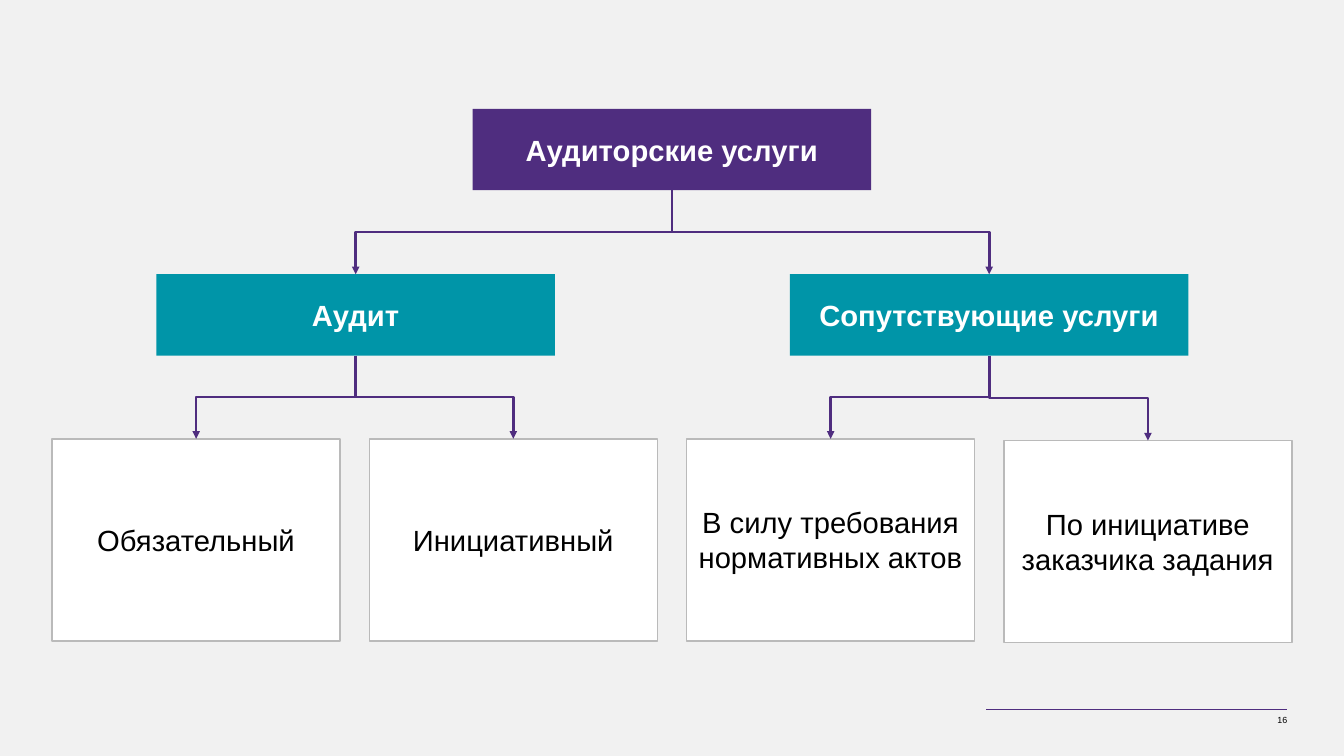
from pptx import Presentation
from pptx.dml.color import RGBColor
from pptx.enum.shapes import MSO_CONNECTOR as Link, MSO_SHAPE as Shape
from pptx.enum.text import MSO_ANCHOR as Anchor, PP_ALIGN as Align
from pptx.oxml.ns import qn
from pptx.util import Inches, Pt
from lxml.etree import SubElement

PURPLE = RGBColor(0x4F, 0x2D, 0x7F)
TEAL = RGBColor(0x00, 0x95, 0xA8)
WHITE = RGBColor(0xFF, 0xFF, 0xFF)
BLACK = RGBColor(0x00, 0x00, 0x00)
GREY = RGBColor(0xBA, 0xBA, 0xBA)
PAPER = RGBColor(0xF1, 0xF1, 0xF1)


class Chart:
    """Draws the boxes, arrows and footer of the services tree."""

    def __init__(self, page, font="Arial", size=23):
        self.page = page
        self.font = font
        self.size = size
        page.background.fill.solid()
        page.background.fill.fore_color.rgb = PAPER

    def add_span(self, para, text, size, color, bold=False):
        span = para.add_run()
        span.text = text
        span.font.name = self.font
        span.font.size = Pt(size)
        span.font.bold = bold
        span.font.color.rgb = color

    def box(self, text, left, top, width, height, fill, color, border=None):
        box = self.page.shapes.add_shape(
            Shape.RECTANGLE, Inches(left), Inches(top), Inches(width), Inches(height))
        box.shadow.inherit = False
        box.fill.solid()
        box.fill.fore_color.rgb = fill
        if border is None:
            box.line.fill.background()
        else:
            box.line.color.rgb = border
            box.line.width = Pt(1.25)
        frame = box.text_frame
        frame.word_wrap = True
        frame.vertical_anchor = Anchor.MIDDLE
        para = frame.paragraphs[0]
        para.alignment = Align.CENTER
        self.add_span(para, text, self.size, color, bold=border is None)
        return box

    def heading(self, text, left, top, fill):
        return self.box(text, left, top, 4.36, 0.89, fill, WHITE)

    def leaf(self, text, left, top):
        return self.box(text, left, top, 3.15, 2.21, WHITE, BLACK, GREY)

    def line(self, kind, start, end, width):
        line = self.page.shapes.add_connector(
            kind, *(Inches(value) for value in (*start, *end)))
        line.line.color.rgb = PURPLE
        line.line.width = Pt(width)
        SubElement(line._element.spPr, qn("a:effectLst"))
        return line

    def arrow(self, parent, child):
        arrow = self.line(Link.ELBOW, (0, 0), (1, 1), 2)
        arrow.begin_connect(parent, 2)
        arrow.end_connect(child, 0)
        outline = arrow._element.spPr.find(qn("a:ln"))
        SubElement(outline, qn("a:tailEnd"), type="triangle")
        self.turn_down(arrow)

    def turn_down(self, arrow):
        across = arrow.end_x - arrow.begin_x
        down = arrow.end_y - arrow.begin_y
        middle_x = (arrow.begin_x + arrow.end_x) // 2
        middle_y = (arrow.begin_y + arrow.end_y) // 2
        arrow.width, arrow.height = down, abs(across)
        arrow.left = middle_x - down // 2
        arrow.top = middle_y - abs(across) // 2
        frame = arrow._element.spPr.find(qn("a:xfrm"))
        frame.set("rot", str((270 if across > 0 else 90) * 60000))
        frame.set("flipH", "1" if across > 0 else "0")
        frame.set("flipV", "0")

    def footer(self, number):
        self.line(Link.STRAIGHT, (10.79, 7.76), (14.08, 7.76), 0.75)
        box = self.page.shapes.add_textbox(
            Inches(13.96), Inches(7.77), Inches(0.12), Inches(0.22))
        frame = box.text_frame
        frame.word_wrap = False
        frame.margin_left = frame.margin_right = 0
        para = frame.paragraphs[0]
        para.alignment = Align.RIGHT
        self.add_span(para, number, 7, BLACK)


def main():
    deck = Presentation()
    deck.slide_width, deck.slide_height = Inches(14.7), Inches(8.27)
    chart = Chart(deck.slides.add_slide(deck.slide_layouts[6]))
    chart.footer("16")
    root = chart.heading("Аудиторские услуги", 5.17, 1.19, PURPLE)
    branches = [
        ("Аудит", 1.71, [("Обязательный", 4.8), ("Инициативный", 4.8)]),
        ("Сопутствующие услуги", 8.64,
         [("В силу требования нормативных актов", 4.8),
          ("По инициативе заказчика задания", 4.82)]),
    ]
    for row, (title, left, leaves) in enumerate(branches):
        branch = chart.heading(title, left, 3, TEAL)
        chart.arrow(root, branch)
        for column, (text, top) in enumerate(leaves, start=2 * row):
            chart.arrow(branch, chart.leaf(text, 0.57 + 3.47 * column, top))
    deck.save("out.pptx")


if __name__ == "__main__":
    main()
